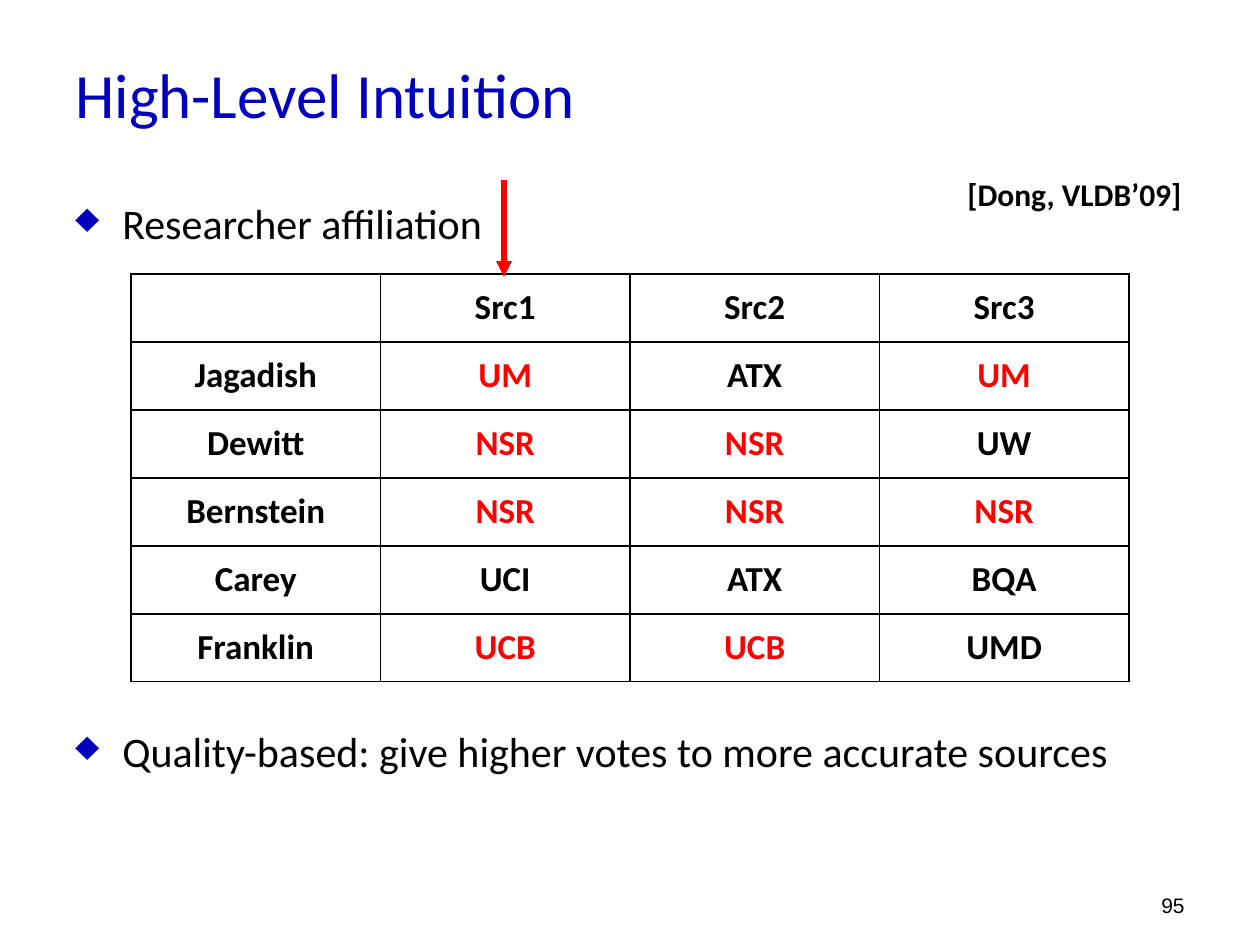
from lxml.etree import SubElement
from pptx import Presentation
from pptx.dml.color import RGBColor
from pptx.enum.shapes import MSO_CONNECTOR
from pptx.enum.text import MSO_ANCHOR, PP_ALIGN
from pptx.oxml.ns import qn
from pptx.util import Emu, Pt

BLUE = RGBColor(0x00, 0x00, 0xBE)
BLACK = RGBColor(0x00, 0x00, 0x00)
RED = RGBColor(0xFF, 0x00, 0x00)

HEADER = ["", "Src1", "Src2", "Src3"]
AFFILIATIONS = [
    ["Jagadish", "UM", "ATX", "UM"],
    ["Dewitt", "NSR", "NSR", "UW"],
    ["Bernstein", "NSR", "NSR", "NSR"],
    ["Carey", "UCI", "ATX", "BQA"],
    ["Franklin", "UCB", "UCB", "UMD"],
]
CORRECT = {"Jagadish": "UM", "Dewitt": "NSR", "Bernstein": "NSR", "Franklin": "UCB"}


def px(value):
    return Emu(round(value * 914400 / 126))


def write(paragraph, text, size=24, color=BLACK, bold=False, font="Calibri",
          align=PP_ALIGN.LEFT):
    paragraph.alignment = align
    run = paragraph.add_run()
    run.text = text
    run.font.name = font
    run.font.size = Pt(size)
    run.font.bold = bold
    run.font.color.rgb = color


def add_solid_fill(parent, color):
    fill = SubElement(parent, qn("a:solidFill"))
    SubElement(fill, qn("a:srgbClr"), val=str(color))


class SlideBuilder:
    def __init__(self, slide):
        self.slide = slide

    def frame(self, left, top, width, height, anchor=MSO_ANCHOR.TOP):
        shape = self.slide.shapes.add_textbox(px(left), px(top), px(width), px(height))
        frame = shape.text_frame
        frame.word_wrap = True
        frame.vertical_anchor = anchor
        return frame

    def text(self, text, left, top, width, height, anchor=MSO_ANCHOR.MIDDLE, **style):
        frame = self.frame(left, top, width, height, anchor)
        write(frame.paragraphs[0], text, **style)

    def bullets(self, items, left, top, width, height, gap, indent=47):
        frame = self.frame(left, top, width, height)
        for index, item in enumerate(items):
            paragraph = frame.add_paragraph() if index else frame.paragraphs[0]
            write(paragraph, item)
            if index:
                paragraph.space_before = Pt(gap)
            properties = paragraph._p.get_or_add_pPr()
            properties.set("marL", str(px(indent)))
            properties.set("indent", str(-px(indent)))
            color = SubElement(properties, qn("a:buClr"))
            SubElement(color, qn("a:srgbClr"), val=str(BLUE))
            SubElement(properties, qn("a:buChar"), char="♦")

    def table(self, rows, left, top, width, row_height):
        shape = self.slide.shapes.add_table(
            len(rows), len(rows[0]), px(left), px(top), px(width),
            px(row_height * len(rows)))
        table = shape.table
        table.first_row = table.horz_banding = False
        for column in table.columns:
            column.width = px(width / len(rows[0]))
        for row, values in zip(table.rows, rows):
            row.height = px(row_height)
            for cell, value in zip(row.cells, values):
                self.cell(cell, value, RED if value == CORRECT.get(values[0]) else BLACK)

    def cell(self, cell, value, color):
        cell.margin_left = cell.margin_right = px(13)
        cell.margin_top = cell.margin_bottom = px(12)
        if value:
            write(cell.text_frame.paragraphs[0], value, size=20, color=color,
                  bold=True, align=PP_ALIGN.CENTER)
        properties = cell._tc.get_or_add_tcPr()
        for side in ("lnL", "lnR", "lnT", "lnB"):
            border = SubElement(properties, qn(f"a:{side}"), w=str(Pt(1)))
            add_solid_fill(border, BLACK)
        cell.fill.background()

    def arrow(self, start, end, color, width):
        connector = self.slide.shapes.add_connector(
            MSO_CONNECTOR.STRAIGHT, *map(px, start + end))
        connector.line.color.rgb = color
        connector.line.width = Pt(width)
        SubElement(connector.line._get_or_add_ln(), qn("a:tailEnd"), type="triangle")
        SubElement(connector._element.spPr, qn("a:effectLst"))


def main():
    presentation = Presentation()
    presentation.slide_width, presentation.slide_height = px(1260), px(945)
    slide = presentation.slides.add_slide(presentation.slide_layouts[6])
    builder = SlideBuilder(slide)
    builder.text("High-Level Intuition", 63, 39, 1134, 108, size=36, color=BLUE)
    builder.bullets(
        ["Researcher affiliation",
         "Quality-based: give higher votes to more accurate sources"],
        63, 191, 1197, 620, gap=273)
    builder.text("95", 903, 861, 294, 63, anchor=MSO_ANCHOR.BOTTOM, size=12,
                 font="Arial", align=PP_ALIGN.RIGHT)
    builder.text("[Dong, VLDB’09]", 955, 147, 290, 93, size=18, bold=True)
    builder.table([HEADER] + AFFILIATIONS, 131, 274, 998, 68)
    builder.arrow((504, 180), (504, 277), RED, 3)
    presentation.save("out.pptx")


if __name__ == "__main__":
    main()
